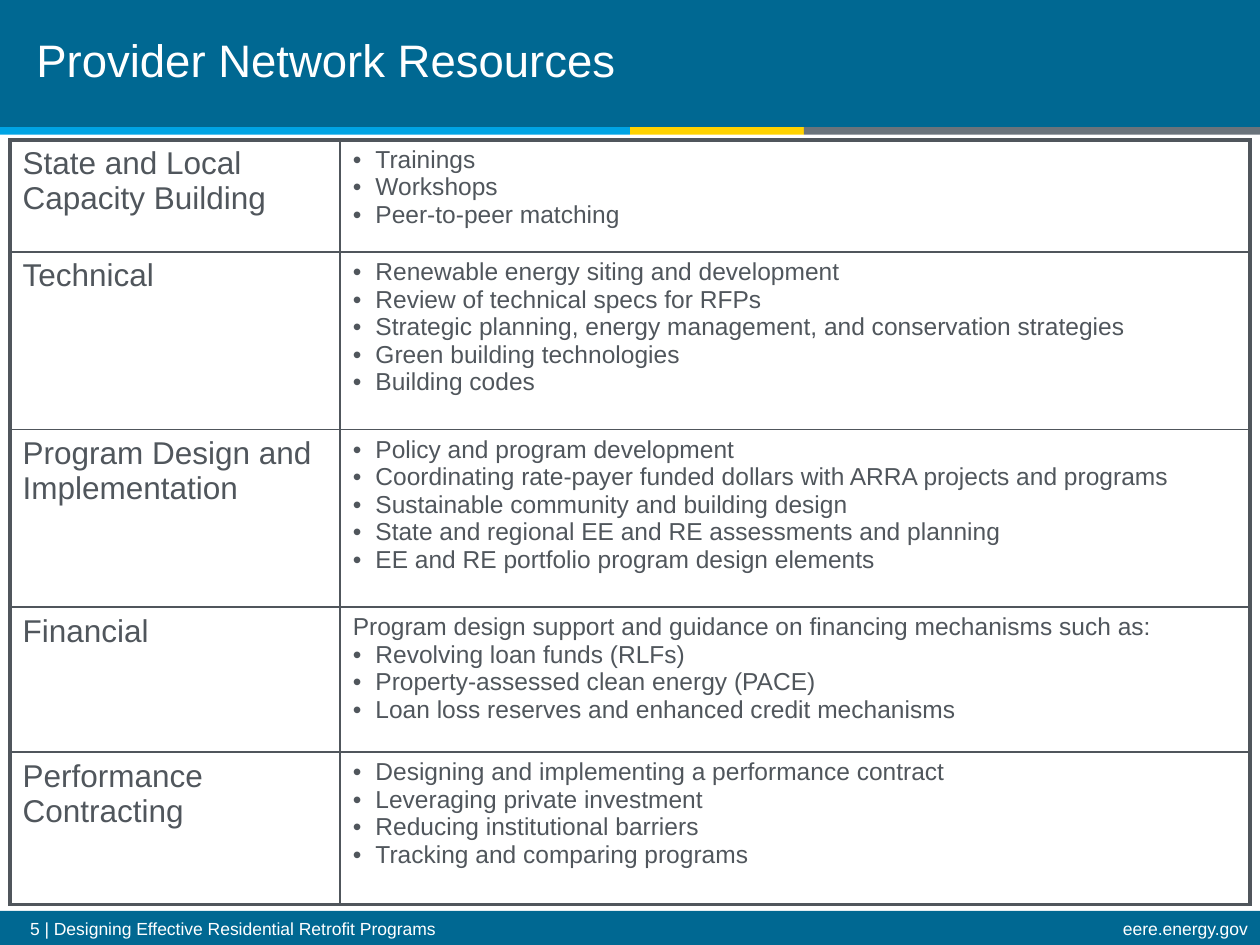
from lxml.etree import SubElement
from pptx import Presentation
from pptx.dml.color import RGBColor
from pptx.enum.shapes import MSO_SHAPE as Shape
from pptx.enum.text import MSO_ANCHOR as Anchor, PP_ALIGN as Align
from pptx.oxml.ns import qn
from pptx.util import Inches, Pt

BLUE, SKY, YELLOW, GRAY = "006892", "00A4E4", "FFD200", "6A737B"
WHITE, INK = "FFFFFF", "50565C"
THIN, THICK = 1, 2.25
BULLET_INDENT = Inches(0.18)

RESOURCES = [
    ("State and Local Capacity Building", 0.89, "", [
        "Trainings",
        "Workshops",
        "Peer-to-peer matching",
    ]),
    ("Technical", 1.41, "", [
        "Renewable energy siting and development",
        "Review of technical specs for RFPs",
        "Strategic planning, energy management, and conservation strategies",
        "Green building technologies",
        "Building codes",
    ]),
    ("Program Design and Implementation", 1.41, "", [
        "Policy and program development",
        "Coordinating rate-payer funded dollars with ARRA projects and programs",
        "Sustainable community and building design",
        "State and regional EE and RE assessments and planning",
        "EE and RE portfolio program design elements",
    ]),
    ("Financial", 1.15,
     "Program design support and guidance on financing mechanisms such as:", [
         "Revolving loan funds (RLFs)",
         "Property-assessed clean energy (PACE)",
         "Loan loss reserves and enhanced credit mechanisms",
     ]),
    ("Performance Contracting", 1.21, "", [
        "Designing and implementing a performance contract",
        "Leveraging private investment",
        "Reducing institutional barriers",
        "Tracking and comparing programs",
    ]),
]


def color(value):
    return RGBColor.from_string(value)


def add_bar(slide, left, top, width, height, fill):
    bar = slide.shapes.add_shape(
        Shape.RECTANGLE, Inches(left), Inches(top), Inches(width), Inches(height))
    bar.shadow.inherit = False
    bar.fill.solid()
    bar.fill.fore_color.rgb = color(fill)
    bar.line.fill.background()


def add_run(paragraph, text, size, text_color):
    run = paragraph.add_run()
    run.text = text
    run.font.name = "Arial"
    run.font.size = Pt(size)
    run.font.color.rgb = color(text_color)


def add_label(slide, left, top, width, height, text, size,
              align=Align.LEFT, anchor=Anchor.TOP):
    label = slide.shapes.add_textbox(
        Inches(left), Inches(top), Inches(width), Inches(height))
    label.text_frame.word_wrap = True
    label.text_frame.vertical_anchor = anchor
    paragraph = label.text_frame.paragraphs[0]
    paragraph.alignment = align
    add_run(paragraph, text, size, WHITE)
    return paragraph


def add_header(slide, left, top, width, height):
    add_bar(slide, left, top, width, height, BLUE)
    stripe_left = left
    for share, fill in [(0.5, SKY), (0.138, YELLOW), (0.362, GRAY)]:
        add_bar(slide, stripe_left, top + height, width * share, 0.06, fill)
        stripe_left += width * share
    title = add_label(slide, left + 0.19, top, 6.19, 0.99,
                      "Provider Network Resources", 26, anchor=Anchor.MIDDLE)
    title.line_spacing = Pt(28)


def add_footer(slide, left, top, width, height):
    add_bar(slide, left, top, width, height, BLUE)
    add_label(slide, left + 0.14, top + 0.01, 5.8, 0.26,
              "5 | Designing Effective Residential Retrofit Programs", 10)
    add_label(slide, left + width - 4.01, top + 0.01, 4.01, 0.26,
              "eere.energy.gov", 10, Align.RIGHT)


def set_borders(cell, left, right, top, bottom):
    properties = cell._tc.get_or_add_tcPr()
    for side, points in [("L", left), ("R", right), ("T", top), ("B", bottom)]:
        line = SubElement(properties, qn(f"a:ln{side}"), w=str(Pt(points)))
        fill = SubElement(line, qn("a:solidFill"))
        SubElement(fill, qn("a:srgbClr"), val=INK)
    cell.fill.background()


def add_bullet(paragraph):
    properties = paragraph._p.get_or_add_pPr()
    properties.set("marL", str(BULLET_INDENT))
    properties.set("indent", str(-BULLET_INDENT))
    SubElement(properties, qn("a:buFont"), typeface="Arial")
    SubElement(properties, qn("a:buChar"), char="•")


def fill_details(cell, intro, items):
    lines = [(intro, False)] if intro else []
    lines += [(item, True) for item in items]
    for index, (text, bulleted) in enumerate(lines):
        frame = cell.text_frame
        paragraph = frame.add_paragraph() if index else frame.paragraphs[0]
        if bulleted:
            add_bullet(paragraph)
        add_run(paragraph, text, 14, INK)


def add_resources(slide, left, top, widths):
    heights = [height for _, height, _, _ in RESOURCES]
    table = slide.shapes.add_table(
        len(RESOURCES), len(widths), Inches(left), Inches(top),
        Inches(sum(widths)), Inches(sum(heights))).table
    table.first_row = False
    table.horz_banding = False
    for column, width in zip(table.columns, widths):
        column.width = Inches(width)
    last = len(RESOURCES) - 1
    for index, (name, height, intro, items) in enumerate(RESOURCES):
        table.rows[index].height = Inches(height)
        name_cell, details_cell = table.cell(index, 0), table.cell(index, 1)
        upper = THICK if index == 0 else THIN
        lower = THICK if index == last else THIN
        set_borders(name_cell, THICK, THIN, upper, lower)
        set_borders(details_cell, THIN, THICK, upper, lower)
        add_run(name_cell.text_frame.paragraphs[0], name, 18, INK)
        fill_details(details_cell, intro, items)


def main():
    presentation = Presentation()
    presentation.slide_width = Inches(10)
    presentation.slide_height = Inches(7.5)
    slide = presentation.slides.add_slide(presentation.slide_layouts[6])
    add_header(slide, 0, 0, 10, 1.01)
    add_footer(slide, 0, 7.23, 10, 0.27)
    add_resources(slide, 0.08, 1.11, [2.62, 7.22])
    presentation.save("out.pptx")


if __name__ == "__main__":
    main()
